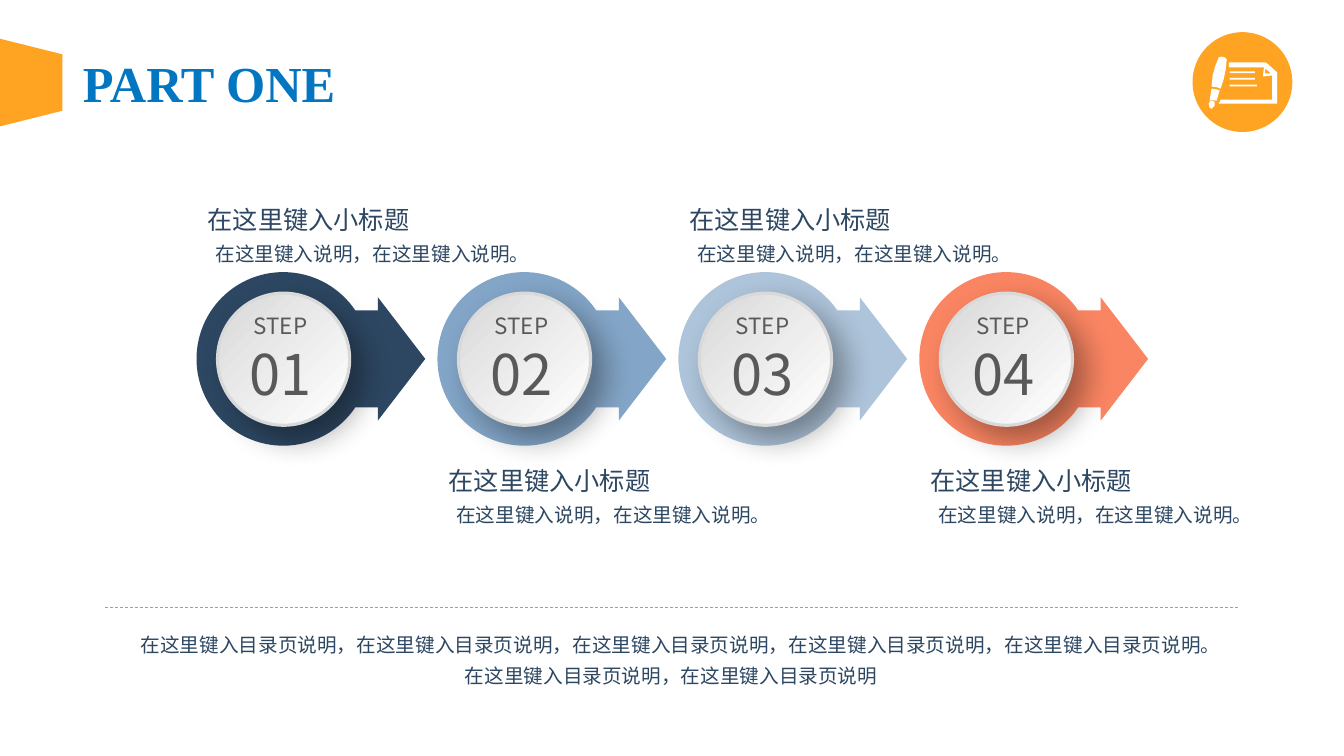
from dataclasses import dataclass
from math import asin, cos, pi, sin

from lxml.etree import SubElement
from pptx import Presentation
from pptx.dml.color import RGBColor
from pptx.enum.dml import MSO_LINE
from pptx.enum.shapes import MSO_CONNECTOR, MSO_SHAPE as SHAPE
from pptx.enum.text import MSO_AUTO_SIZE as AUTO, PP_ALIGN
from pptx.oxml.ns import qn
from pptx.util import Pt


@dataclass(frozen=True)
class Theme:
    blue: str = "0376C2"
    orange: str = "FFA422"
    navy: str = "2D4762"
    grey: str = "595959"
    silver: str = "D9D9DA"
    white: str = "FFFFFF"
    rule: str = "9AA3A3"
    arrows: tuple = ("2D4762", "83A5C7", "AEC4DA", "FA8562")
    serif: str = "Times New Roman"
    head: str = "Calibri"
    body: str = "Karla"
    cjk: str = "Noto Sans CJK SC"
    title_size: int = 36
    number_size: int = 40
    head_size: int = 18
    step_size: int = 16
    body_size: int = 14


T = Theme()


def rgb(code):
    return RGBColor.from_string(code)


def add_text(slide, box, lines, font, color, spacing=None, bold=None, wrap=True):
    """Centred text; lines holds (text, size) pairs, one per paragraph."""
    tf = slide.shapes.add_textbox(*map(Pt, box)).text_frame
    tf.word_wrap = wrap
    tf.auto_size = AUTO.SHAPE_TO_FIT_TEXT
    for i, (text, size) in enumerate(lines):
        p = tf.add_paragraph() if i else tf.paragraphs[0]
        p.alignment = PP_ALIGN.CENTER
        p.line_spacing = spacing
        r = p.add_run()
        r.text = text
        r.font.size, r.font.bold = Pt(size), bold
        r.font.color.rgb = rgb(color)
        r.font.name = font
        SubElement(r.font._element, qn("a:ea"), typeface=T.cjk)


def paint(sp, color):
    sp.shadow.inherit = False
    sp.fill.solid()
    sp.fill.fore_color.rgb = rgb(color)
    sp.line.fill.background()


def add_outline(slide, x, y, contours, color, unit=1.0):
    """Closed contours measured from (x, y), in multiples of unit points."""
    fine = 100
    scaled = [[(a * unit * fine, b * unit * fine) for a, b in c] for c in contours]
    builder = None
    for first, *rest in scaled:
        if builder is None:
            builder = slide.shapes.build_freeform(*first, scale=Pt(1) / fine)
        else:
            builder.move_to(*first)
        builder.add_line_segments(rest, close=True)
    paint(builder.convert_to_shape(Pt(x), Pt(y)), color)


# Header: side tab, title and round badge
def add_header(slide, x, y):
    add_text(slide, (x + 22.3, y + 6, 254.2, 51), [("PART ONE", T.title_size)],
             T.serif, T.blue, bold=True)
    tab = slide.shapes.add_shape(SHAPE.TRAPEZOID, Pt(x - 9), Pt(y + 8.9),
                                 Pt(62.6), Pt(44.6))
    tab.rotation = 90
    paint(tab, T.orange)


def add_badge(slide, x, y, size):
    paint(slide.shapes.add_shape(SHAPE.OVAL, Pt(x), Pt(y), Pt(size), Pt(size)), T.orange)
    pen = [(26, 25), (29, 24.2), (32, 25), (34, 27), (33, 37), (31, 46.5),
           (28, 56), (24, 54.6), (19, 54), (20, 43), (22.5, 34)]
    ferrule = [(19, 56), (27, 57.5), (24, 68), (17, 67)]
    nib = [(18, 67.5), (22, 69), (22, 73), (19, 76), (17, 75), (16, 71)]
    page = [(28, 67), (26, 71), (84, 71), (84, 40), (74, 31), (72, 30), (36, 30),
            (36, 35), (71, 35), (70, 42), (70, 44), (79, 43), (79, 67)]
    fold = [(78, 41), (72, 41), (72, 36)]
    writing = [[(37, t), (37 + w, t), (37 + w, t + 1.7), (37, t + 1.7)]
               for t, w in ((39, 25), (45.3, 25), (52, 27))]
    add_outline(slide, x, y, [pen, ferrule, nib, page, fold, *writing],
                T.white, unit=size / 99)


# One step: arrow, raised disc and its label
def add_arrow(slide, x, y, color):
    radius, neck, barb = 62, 34.6, 44
    start = asin(neck / radius)
    turns = [start + (2 * pi - 2 * start) * i / 90 for i in range(91)]
    ring = [(radius + radius * cos(a), radius + radius * sin(a)) for a in turns]
    head = [(129.6, radius - neck), (129.6, radius - barb), (163.4, radius),
            (129.6, radius + barb), (129.6, radius + neck)]
    add_outline(slide, x, y, [ring + head], color)


def add_disc(slide, x, y, size):
    sp = slide.shapes.add_shape(SHAPE.OVAL, Pt(x), Pt(y), Pt(size), Pt(size))
    sp.fill.gradient()
    sp.fill.gradient_angle = 315
    for stop, color in zip(sp.fill.gradient_stops, (T.silver, T.white)):
        stop.color.rgb = rgb(color)
    sp.line.color.rgb = rgb(T.silver)
    sp.line.width = Pt(2.25)
    sp.shadow.inherit = False
    effects = sp._element.spPr.find(qn("a:effectLst"))
    shadow = SubElement(effects, qn("a:outerShdw"), blurRad=str(Pt(22)),
                        dist=str(Pt(13)), dir="2700000", algn="tl", rotWithShape="0")
    black = SubElement(shadow, qn("a:srgbClr"), val="000000")
    SubElement(black, qn("a:alpha"), val="35000")


def add_step(slide, x, y, number, color):
    add_arrow(slide, x, y, color)
    add_disc(slide, x + 15, y + 15, 94.4)
    add_text(slide, (x + 29, y + 25.2, 62, 75),
             [("STEP", T.step_size), (f"{number:02}", T.number_size)],
             T.cjk, T.grey, wrap=False)


def add_caption(slide, x, y):
    add_text(slide, (x, y, 160, 29), [("在这里键入小标题", T.head_size)], T.head, T.navy)
    add_text(slide, (x, y + 21.6, 237.6, 29.5),
             [("在这里键入说明，在这里键入说明。", T.body_size)], T.body, T.navy, spacing=1.3)


def add_steps(slide, x, y, pitch):
    for i, color in enumerate(T.arrows):
        left = x + i * pitch
        add_step(slide, left, y, i + 1, color)
        # Captions alternate above and below the row
        add_caption(slide, left, y + (134.4 if i % 2 else -51.8))


# Footer: dashed rule and summary
def add_footer(slide, x, y, width):
    rule = slide.shapes.add_connector(MSO_CONNECTOR.STRAIGHT, Pt(x), Pt(y),
                                      Pt(x + width), Pt(y))
    rule.line.color.rgb = rgb(T.rule)
    rule.line.width = Pt(0.5)
    rule.line.dash_style = MSO_LINE.DASH
    SubElement(rule._element.spPr, qn("a:effectLst"))
    phrase = "在这里键入目录页说明"
    summary = "，".join([phrase] * 5) + "。" + "，".join([phrase] * 2)
    add_text(slide, (x + 15.8, y + 9.4, 777.6, 51), [(summary, T.body_size)],
             T.body, T.navy, spacing=1.3)


def main():
    prs = Presentation()
    prs.slide_width, prs.slide_height = Pt(960), Pt(540)
    slide = prs.slides.add_slide(prs.slide_layouts[6])
    add_header(slide, 0, 27.8)
    add_badge(slide, 851.8, 23, 71.3)
    add_steps(slide, 140.4, 194.4, 172.1)
    add_footer(slide, 74.9, 434.2, 810)
    prs.save("out.pptx")


if __name__ == "__main__":
    main()
